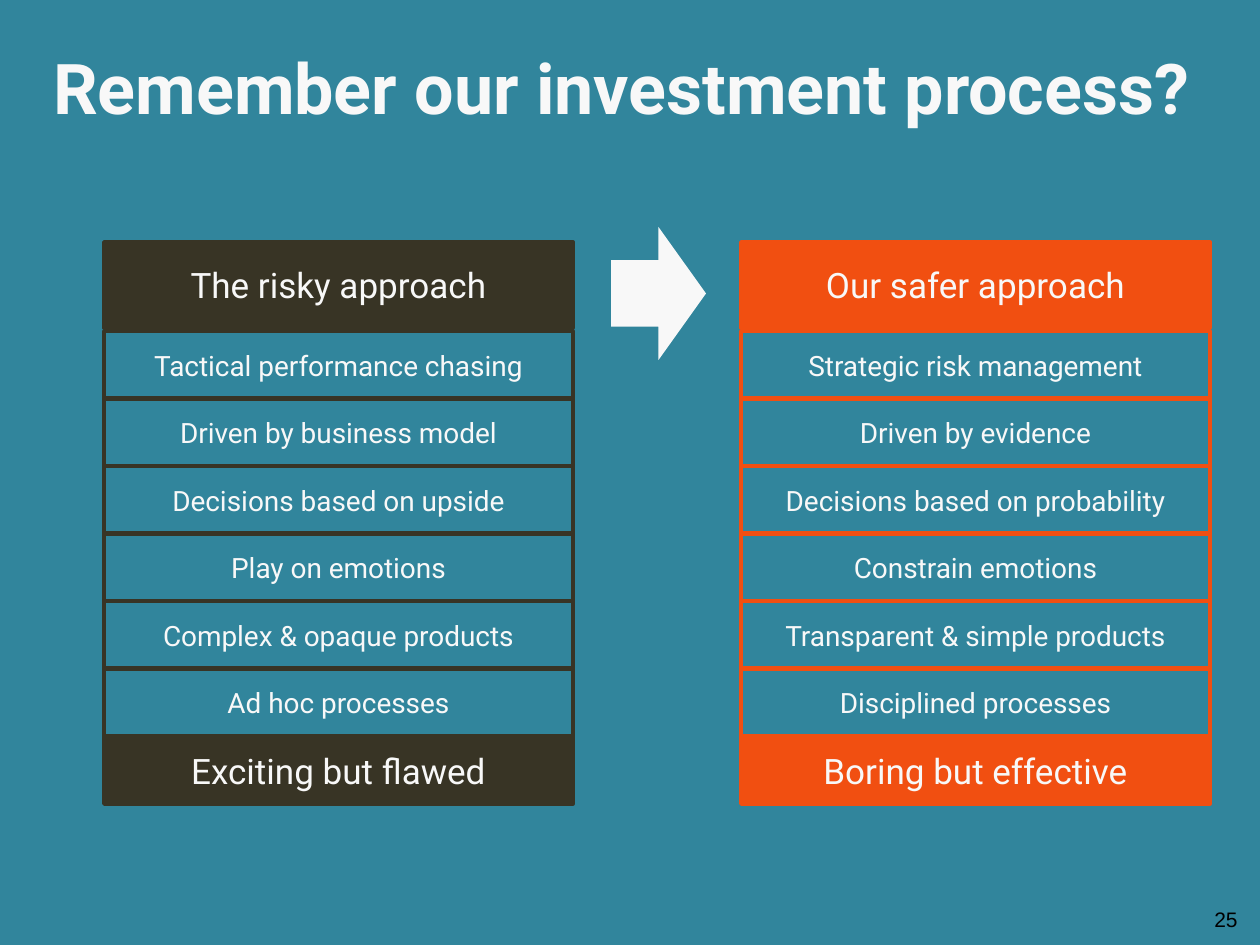
"""Build a slide that contrasts a risky and a safer investment approach."""
from dataclasses import dataclass

from pptx import Presentation
from pptx import util as u
from pptx.dml.color import RGBColor
from pptx.enum import shapes, text

SCALE = 914400 / 126
TEAL = RGBColor(0x31, 0x85, 0x9C)
DARK = RGBColor(0x38, 0x34, 0x25)
ORANGE = RGBColor(0xF1, 0x4F, 0x11)
WHITE = RGBColor(0xF8, 0xF8, 0xF8)
BLACK = RGBColor(0, 0, 0)

COLUMN_WIDTH = 469
HEADER_TOP, HEADER_HEIGHT = 242, 86
FIRST_ROW_TOP, ROW_HEIGHT = 331, 68
ROW_PITCH = 67.5


@dataclass(frozen=True)
class Box:
    left: int
    top: int
    width: int
    height: int

    def emu(self) -> tuple[int, ...]:
        lengths = (self.left, self.top, self.width, self.height)
        return tuple(round(length * SCALE) for length in lengths)


@dataclass(frozen=True)
class Approach:
    left: int
    color: RGBColor
    header: str
    traits: tuple[str, ...]
    verdict: str


APPROACHES = (
    Approach(104, DARK, "The risky approach", (
        "Tactical performance chasing",
        "Driven by business model",
        "Decisions based on upside",
        "Play on emotions",
        "Complex & opaque products",
        "Ad hoc processes",
    ), "Exciting but flawed"),
    Approach(741, ORANGE, "Our safer approach", (
        "Strategic risk management",
        "Driven by evidence",
        "Decisions based on probability",
        "Constrain emotions",
        "Transparent & simple products",
        "Disciplined processes",
    ), "Boring but effective"),
)


def write(shape, words: str, size: int, color: RGBColor = WHITE,
          align=text.PP_ALIGN.CENTER, anchor=text.MSO_ANCHOR.MIDDLE,
          font: str = "Roboto", bold: bool = False) -> None:
    frame = shape.text_frame
    frame.word_wrap = True
    frame.auto_size = text.MSO_AUTO_SIZE.NONE
    frame.vertical_anchor = anchor
    paragraph = frame.paragraphs[0]
    paragraph.text = words
    paragraph.alignment = align
    paragraph.font.name = font
    paragraph.font.size = u.Pt(size)
    paragraph.font.bold = bold
    paragraph.font.color.rgb = color


def add_cell(slide, box: Box, words: str, size: int, color: RGBColor,
             filled: bool) -> None:
    shape = slide.shapes.add_shape(shapes.MSO_SHAPE.RECTANGLE, *box.emu())
    shape.shadow.inherit = False
    if filled:
        shape.fill.solid()
        shape.fill.fore_color.rgb = color
    else:
        shape.fill.background()
    shape.line.color.rgb = color
    shape.line.width = u.Pt(2)
    write(shape, words, size)


def add_approach(slide, approach: Approach) -> None:
    header = Box(approach.left, HEADER_TOP, COLUMN_WIDTH, HEADER_HEIGHT)
    add_cell(slide, header, approach.header, 20, approach.color, True)
    rows = (*approach.traits, approach.verdict)
    for index, words in enumerate(rows):
        top = FIRST_ROW_TOP + int(index * ROW_PITCH)
        is_verdict = index == len(approach.traits)
        box = Box(approach.left, top, COLUMN_WIDTH, ROW_HEIGHT)
        add_cell(slide, box, words, 20 if is_verdict else 16,
                 approach.color, is_verdict)


def add_arrow(slide, box: Box) -> None:
    arrow = slide.shapes.add_shape(shapes.MSO_SHAPE.RIGHT_ARROW, *box.emu())
    arrow.shadow.inherit = False
    arrow.fill.solid()
    arrow.fill.fore_color.rgb = WHITE
    arrow.line.fill.background()


def main() -> None:
    presentation = Presentation()
    presentation.slide_width = u.Inches(10)
    presentation.slide_height = u.Inches(7.5)
    slide = presentation.slides.add_slide(presentation.slide_layouts[5])
    slide.background.fill.solid()
    slide.background.fill.fore_color.rgb = TEAL

    title = slide.shapes.title
    title.left, title.top, title.width, title.height = Box(0, 38, 1260, 120).emu()
    write(title, "Remember our investment process? ", 40,
          anchor=text.MSO_ANCHOR.TOP, bold=True)

    for approach in APPROACHES:
        add_approach(slide, approach)
    add_arrow(slide, Box(611, 227, 95, 133))

    page_number = slide.shapes.add_textbox(*Box(956, 894, 294, 50).emu())
    write(page_number, "25", 12, BLACK, text.PP_ALIGN.RIGHT, font="Arial")
    presentation.save("out.pptx")


if __name__ == "__main__":
    main()
